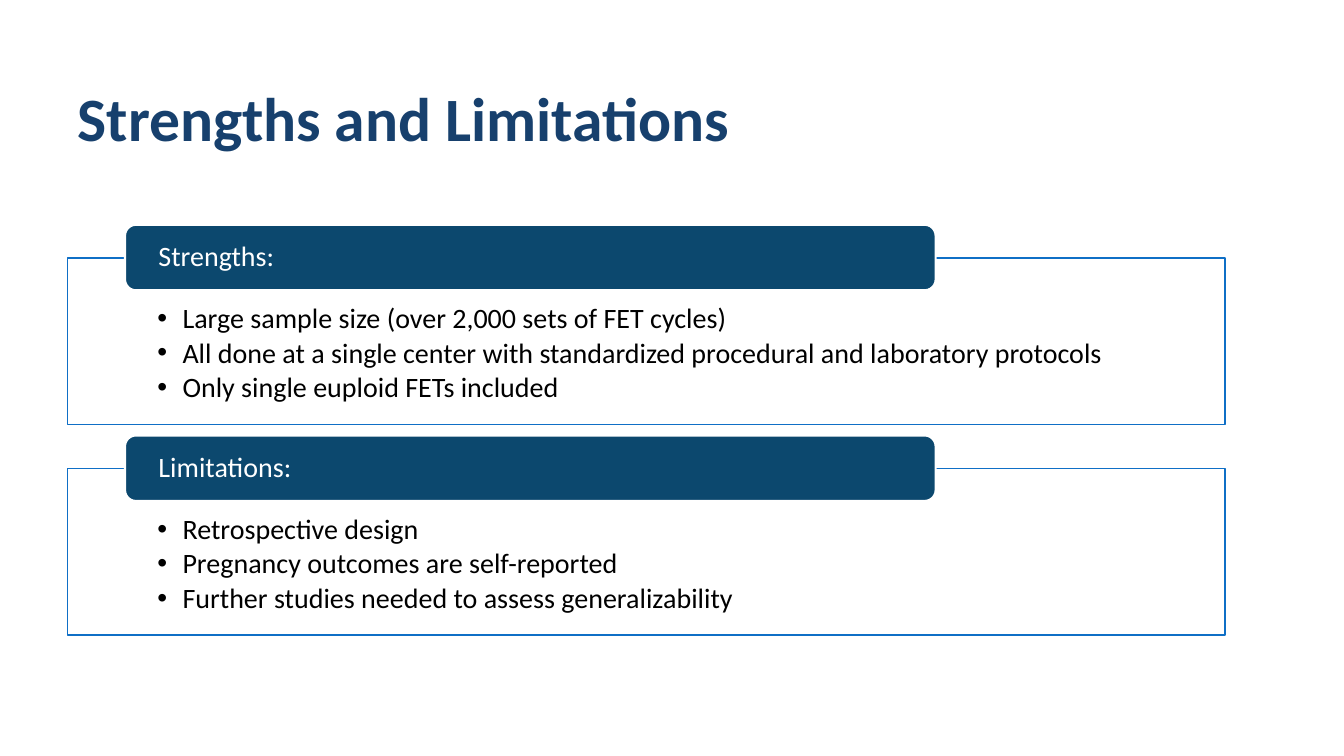
"""Build the slide on the strengths and limitations of the study."""
import dataclasses

import lxml.etree
import pptx
import pptx.dml.color
import pptx.enum.shapes
import pptx.enum.text
import pptx.oxml.ns
import pptx.shapes.autoshape
import pptx.shapes.base
import pptx.slide
import pptx.text.text
import pptx.util

Inches = pptx.util.Inches
Pt = pptx.util.Pt

FONT = "Calibri"
WHITE, BLACK = "FFFFFF", "000000"
NAVY, TEAL, BLUE = "17406D", "0C486E", "0F6FC6"
LEFT = 0.67
FIRST_FRAME_TOP, FRAME_PITCH = 2.56, 2.09
FRAME_WIDTH, FRAME_HEIGHT = 11.48, 1.65
HEADING_LEFT, HEADING_RISE = 1.24, 0.33
HEADING_WIDTH, HEADING_HEIGHT = 8.04, 0.65
BULLET_INDENT = 0.25


@dataclasses.dataclass(frozen=True)
class Section:
    heading: str
    points: tuple[str, ...]


SECTIONS = (
    Section("Strengths:", (
        "Large sample size (over 2,000 sets of FET cycles)",
        "All done at a single center with standardized procedural and laboratory protocols",
        "Only single euploid FETs included",
    )),
    Section("Limitations:", (
        "Retrospective design",
        "Pregnancy outcomes are self-reported",
        "Further studies needed to assess generalizability",
    )),
)


def rgb(value: str) -> pptx.dml.color.RGBColor:
    return pptx.dml.color.RGBColor.from_string(value)


def place(shape: pptx.shapes.base.BaseShape, left: float, top: float,
          width: float, height: float) -> None:
    shape.left, shape.top = Inches(left), Inches(top)
    shape.width, shape.height = Inches(width), Inches(height)


def paint(shape: pptx.shapes.autoshape.Shape, fill: str, line: str, weight: float) -> None:
    shape.fill.solid()
    shape.fill.fore_color.rgb = rgb(fill)
    shape.line.color.rgb = rgb(line)
    shape.line.width = Pt(weight)


def set_frame(frame: pptx.text.text.TextFrame, anchor: pptx.enum.text.MSO_ANCHOR,
              side: float, top: float, bottom: float) -> None:
    frame.word_wrap = True
    frame.auto_size = pptx.enum.text.MSO_AUTO_SIZE.NONE
    frame.vertical_anchor = anchor
    frame.margin_left = frame.margin_right = Inches(side)
    frame.margin_top, frame.margin_bottom = Inches(top), Inches(bottom)


def format_text(frame: pptx.text.text.TextFrame, size: float, color: str,
                bold: bool = False, after: float = 0) -> None:
    for paragraph in frame.paragraphs:
        paragraph.alignment = pptx.enum.text.PP_ALIGN.LEFT
        paragraph.line_spacing = 0.9
        paragraph.space_before, paragraph.space_after = Pt(0), Pt(after)
        for run in paragraph.runs:
            run.font.name, run.font.size, run.font.bold = FONT, Pt(size), bold
            run.font.color.rgb = rgb(color)


def add_bullet(paragraph: pptx.text.text._Paragraph) -> None:
    properties = paragraph._p.get_or_add_pPr()
    properties.set("marL", str(Inches(BULLET_INDENT)))
    properties.set("indent", str(-Inches(BULLET_INDENT)))
    bullet = lxml.etree.SubElement(properties, pptx.oxml.ns.qn("a:buChar"))
    bullet.set("char", "•")


def draw_title(title: pptx.shapes.autoshape.Shape) -> None:
    place(title, LEFT, 0.61, 12, 1.2)
    title.text_frame.text = "Strengths and Limitations"
    set_frame(title.text_frame, pptx.enum.text.MSO_ANCHOR.MIDDLE, 0.1, 0.05, 0.05)
    format_text(title.text_frame, 44, NAVY, bold=True)


def draw_section(slide: pptx.slide.Slide, points: pptx.shapes.autoshape.Shape,
                 section: Section, top: float) -> None:
    place(points, LEFT, top, FRAME_WIDTH, FRAME_HEIGHT)
    paint(points, WHITE, BLUE, 1)
    points.text_frame.text = "\n".join(section.points)
    set_frame(points.text_frame, pptx.enum.text.MSO_ANCHOR.TOP, 0.89, 0.46, 0.16)
    for paragraph in points.text_frame.paragraphs:
        add_bullet(paragraph)
    format_text(points.text_frame, 20, BLACK, after=3)

    heading = slide.shapes.add_shape(
        pptx.enum.shapes.MSO_SHAPE.ROUNDED_RECTANGLE,
        Inches(HEADING_LEFT), Inches(top - HEADING_RISE),
        Inches(HEADING_WIDTH), Inches(HEADING_HEIGHT))
    heading.shadow.inherit = False
    paint(heading, TEAL, WHITE, 1.5)
    heading.text_frame.text = section.heading
    set_frame(heading.text_frame, pptx.enum.text.MSO_ANCHOR.MIDDLE, 0.3, 0, 0)
    format_text(heading.text_frame, 20, WHITE)


def main() -> None:
    presentation = pptx.Presentation()
    presentation.slide_width, presentation.slide_height = Inches(13.33), Inches(7.5)
    slide = presentation.slides.add_slide(
        presentation.slide_layouts.get_by_name("Two Content"))
    title, *bodies = slide.placeholders
    draw_title(title)
    for row, (body, section) in enumerate(zip(bodies, SECTIONS)):
        draw_section(slide, body, section, FIRST_FRAME_TOP + row * FRAME_PITCH)
    presentation.save("out.pptx")


if __name__ == "__main__":
    main()
